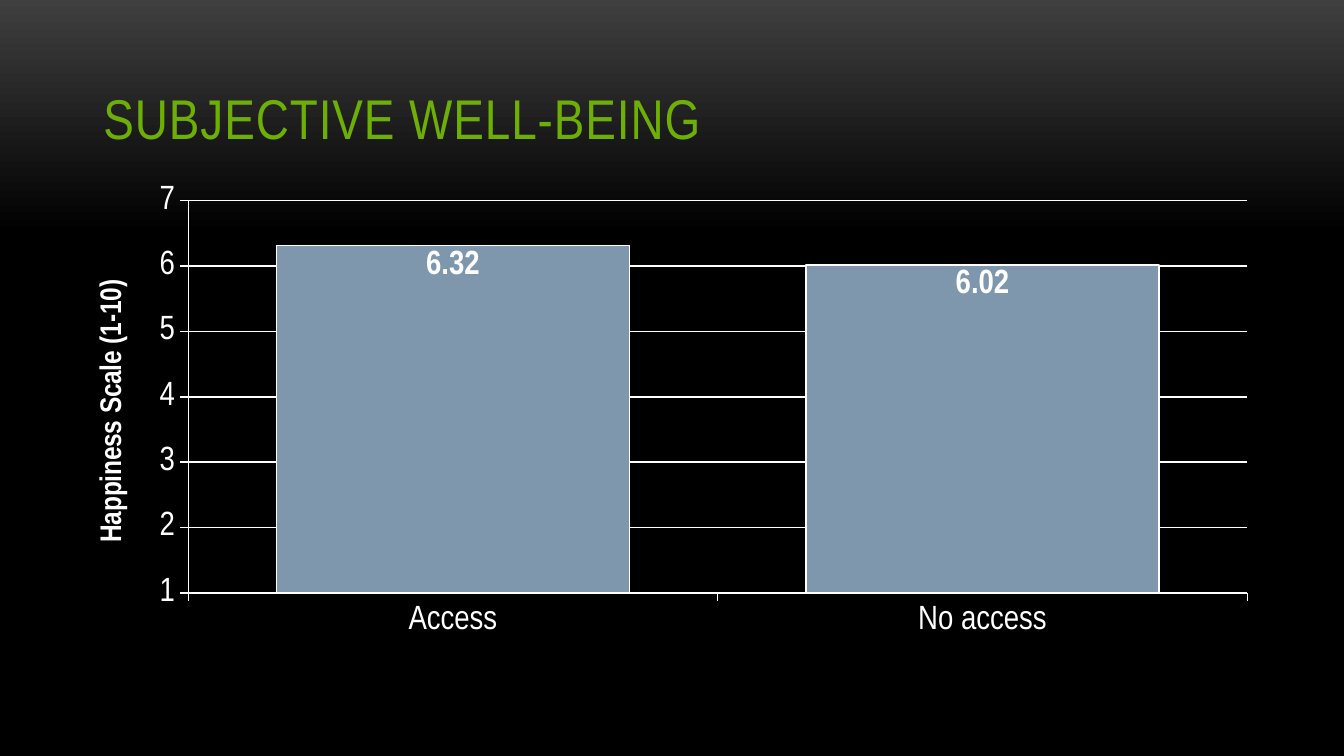
import pptx
import pptx.chart.data
import pptx.dml.color
import pptx.enum.chart
import pptx.enum.text
import pptx.util

Inches = pptx.util.Inches
Pt = pptx.util.Pt
RGB = pptx.dml.color.RGBColor
enum = pptx.enum.chart

GREEN = RGB(0x6E, 0xAF, 0x05)
STEEL = RGB(0x7E, 0x97, 0xAD)
WHITE = RGB(0xFF, 0xFF, 0xFF)
BLACK = RGB(0, 0, 0)
GREY = RGB(0x3F, 0x3F, 0x3F)
FACE = "Arial Narrow"


def assign(obj, **values):
    for key, value in values.items():
        setattr(obj, key, value)


def style(font, size, color, bold=False):
    assign(font, name=FACE, size=Pt(size), bold=bold)
    font.color.rgb = color


def outline(line):
    line.color.rgb = WHITE
    line.width = Pt(0.75)


def paint(slide):
    """Grey fades to black over the top third."""
    fill = slide.background.fill
    fill.gradient()
    fill.gradient_angle = 270
    for stop, place, color in zip(fill.gradient_stops, (0, 0.31), (GREY, BLACK)):
        stop.position = place
        stop.color.rgb = color


def add_title(slide, left, top, width, height):
    title = slide.shapes.title
    assign(title, left=Inches(left), top=Inches(top),
           width=Inches(width), height=Inches(height))
    frame = title.text_frame
    assign(frame, text="SUBJECTIVE WELL-BEING", word_wrap=True,
           vertical_anchor=pptx.enum.text.MSO_ANCHOR.BOTTOM)
    para = frame.paragraphs[0]
    para.alignment = pptx.enum.text.PP_ALIGN.LEFT
    run = para.runs[0]
    style(run.font, 30, GREEN)
    # Letter spacing of half a point
    run.font._element.set("spc", "50")


def add_bars(slide, left, top, width, height):
    data = pptx.chart.data.CategoryChartData(number_format="0.00")
    data.categories = ["Access", "No access"]
    data.add_series("Series 1", (6.32, 6.02))
    chart = slide.shapes.add_chart(
        enum.XL_CHART_TYPE.COLUMN_CLUSTERED, Inches(left), Inches(top),
        Inches(width), Inches(height), data).chart
    assign(chart, has_title=False, has_legend=False)
    style(chart.font, 18, WHITE)

    # Bars and their values
    plot = chart.plots[0]
    assign(plot, gap_width=50, vary_by_categories=False)
    bars = plot.series[0]
    bars.format.fill.solid()
    bars.format.fill.fore_color.rgb = STEEL
    outline(bars.format.line)
    labels = bars.data_labels
    assign(labels, show_value=True, number_format="0.00",
           number_format_is_linked=False,
           position=enum.XL_LABEL_POSITION.INSIDE_END)
    style(labels.font, 18, WHITE, True)

    # Axes
    for axis in (chart.category_axis, chart.value_axis):
        axis.major_tick_mark = enum.XL_TICK_MARK.OUTSIDE
        outline(axis.format.line)
        style(axis.tick_labels.font, 18, WHITE)
    scale = chart.value_axis
    assign(scale, minimum_scale=1, major_unit=1, has_major_gridlines=True)
    outline(scale.major_gridlines.format.line)
    assign(scale.tick_labels, number_format="0", number_format_is_linked=False)
    frame = scale.axis_title.text_frame
    frame.text = "Happiness Scale (1-10)"
    style(frame.paragraphs[0].runs[0].font, 16, WHITE, True)


def main():
    deck = pptx.Presentation()
    # Widescreen, 16 by 9
    wide = Inches(10)
    assign(deck, slide_width=wide, slide_height=wide * 9 // 16)
    slide = deck.slides.add_slide(deck.slide_layouts[5])
    paint(slide)
    add_title(slide, 0.67, 0.23, 8.67, 0.94)
    add_bars(slide, 0.5, 1.31, 8.96, 3.5)
    deck.save("out.pptx")


if __name__ == "__main__":
    main()
